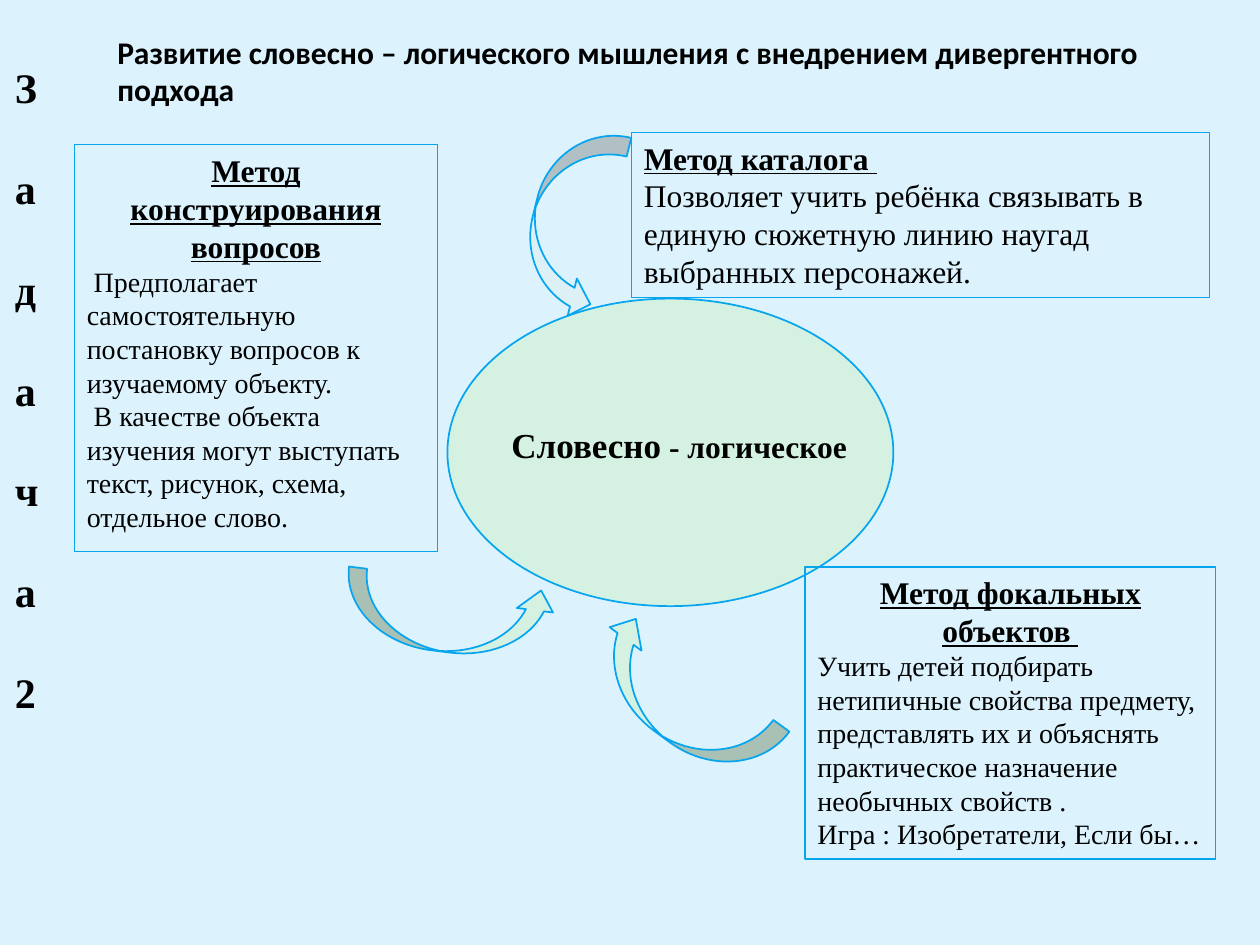
"""Slide on methods for developing verbal and logical thinking."""
import pptx
import pptx.dml.color
import pptx.enum.shapes
import pptx.enum.text
import pptx.util
from pptx.util import Cm

COLORS = {"background": "DCF3FE", "line": "08A5EF", "mint": "D4F1E2",
          "pale": "DCF0F5", "text": "000000"}
SHAPES = pptx.enum.shapes.MSO_SHAPE
ALIGN = pptx.enum.text.PP_ALIGN
SERIF = "Times New Roman"


def rgb(name):
    return pptx.dml.color.RGBColor.from_string(COLORS[name])


def add_run(p, text, size=18, font=SERIF, bold=False, underline=False):
    r = p.add_run()
    r.text = text
    r.font.size = pptx.util.Pt(size)
    r.font.name = font
    r.font.bold = bold
    r.font.underline = underline
    r.font.color.rgb = rgb("text")


def set_line(sp, width):
    sp.line.color.rgb = rgb("line")
    sp.line.width = pptx.util.Pt(width)


def place(sp, box):
    sp.left, sp.top, sp.width, sp.height = map(Cm, box)


def add_title(s, text, box):
    sp = s.shapes.title
    place(sp, box)
    tf = sp.text_frame
    tf.word_wrap = True
    tf.auto_size = pptx.enum.text.MSO_AUTO_SIZE.NONE
    tf.vertical_anchor = pptx.enum.text.MSO_ANCHOR.TOP
    p = tf.paragraphs[0]
    p.alignment = ALIGN.LEFT
    add_run(p, text, font="Calibri", bold=True)


def add_text(s, box, vert=None):
    sp = s.shapes.add_textbox(*map(Cm, box))
    sp.text_frame.word_wrap = True
    if vert:
        sp.text_frame._txBody.bodyPr.set("vert", vert)
    return sp


def add_method(s, box, heading, body, size=16, align=ALIGN.CENTER):
    sp = add_text(s, box)
    set_line(sp, 0.75)
    tf = sp.text_frame
    p = tf.paragraphs[0]
    p.alignment = align
    add_run(p, heading, bold=True, underline=True)
    for text in body:
        add_run(tf.add_paragraph(), text, size=size)


def add_figure(s, kind, box, fill="mint", rotation=0, adjustments=(), flip=False):
    sp = s.shapes.add_shape(kind, *map(Cm, box))
    sp.shadow.inherit = False
    sp.fill.solid()
    sp.fill.fore_color.rgb = rgb(fill)
    set_line(sp, 1)
    sp.rotation = rotation
    for i, value in enumerate(adjustments):
        sp.adjustments[i] = value
    if flip:
        sp.element.spPr.xfrm.set("flipV", "1")


def main():
    prs = pptx.Presentation()
    prs.slide_width, prs.slide_height = Cm(25.4), Cm(19.05)
    s = prs.slides.add_slide(prs.slide_layouts[5])
    s.background.fill.solid()
    s.background.fill.fore_color.rgb = rgb("background")

    sp = add_text(s, (0.05, 1.12, 1.63, 16), vert="wordArtVert")
    add_run(sp.text_frame.paragraphs[0], "З а д а ч а 2", size=24, bold=True)
    add_title(s, "Развитие словесно – логического мышления с внедрением "
                 "дивергентного подхода", (2.11, 0.53, 22, 1.8))

    add_figure(s, SHAPES.OVAL, (9.02, 6.02, 8.99, 6.2))
    add_method(s, (12.73, 2.67, 11.66, 3.33), "Метод каталога ",
               ["Позволяет учить ребёнка связывать в единую сюжетную линию "
                "наугад выбранных персонажей."], size=18, align=ALIGN.LEFT)
    add_method(s, (16.23, 11.43, 8.28, 5.89), "Метод фокальных объектов ",
               ["Учить детей подбирать нетипичные свойства предмету, "
                "представлять их и объяснять практическое назначение "
                "необычных свойств .",
                "Игра : Изобретатели, Если бы…"])
    add_method(s, (1.5, 2.92, 7.32, 8.2), "Метод конструирования вопросов",
               [" Предполагает самостоятельную постановку вопросов к "
                "изучаемому объекту.",
                " В качестве объекта изучения могут выступать текст, "
                "рисунок, схема, отдельное слово."])

    bend = (0.25, 0.5, 0.28)
    add_figure(s, SHAPES.CURVED_UP_ARROW, (6.93, 11.68, 4.27, 1.47),
               rotation=7.1, adjustments=bend)
    add_figure(s, SHAPES.CURVED_UP_ARROW, (11.61, 13.34, 4.24, 1.6),
               rotation=216.3, adjustments=bend, flip=True)
    add_figure(s, SHAPES.CURVED_RIGHT_ARROW, (10.74, 2.54, 1.55, 3.84),
               fill="pale", rotation=13.8)

    p = add_text(s, (10.06, 8.41, 8.53, 1.12)).text_frame.paragraphs[0]
    add_run(p, "Словесно", size=20, bold=True)
    add_run(p, " - логическое", bold=True)
    prs.save("out.pptx")


if __name__ == "__main__":
    main()
